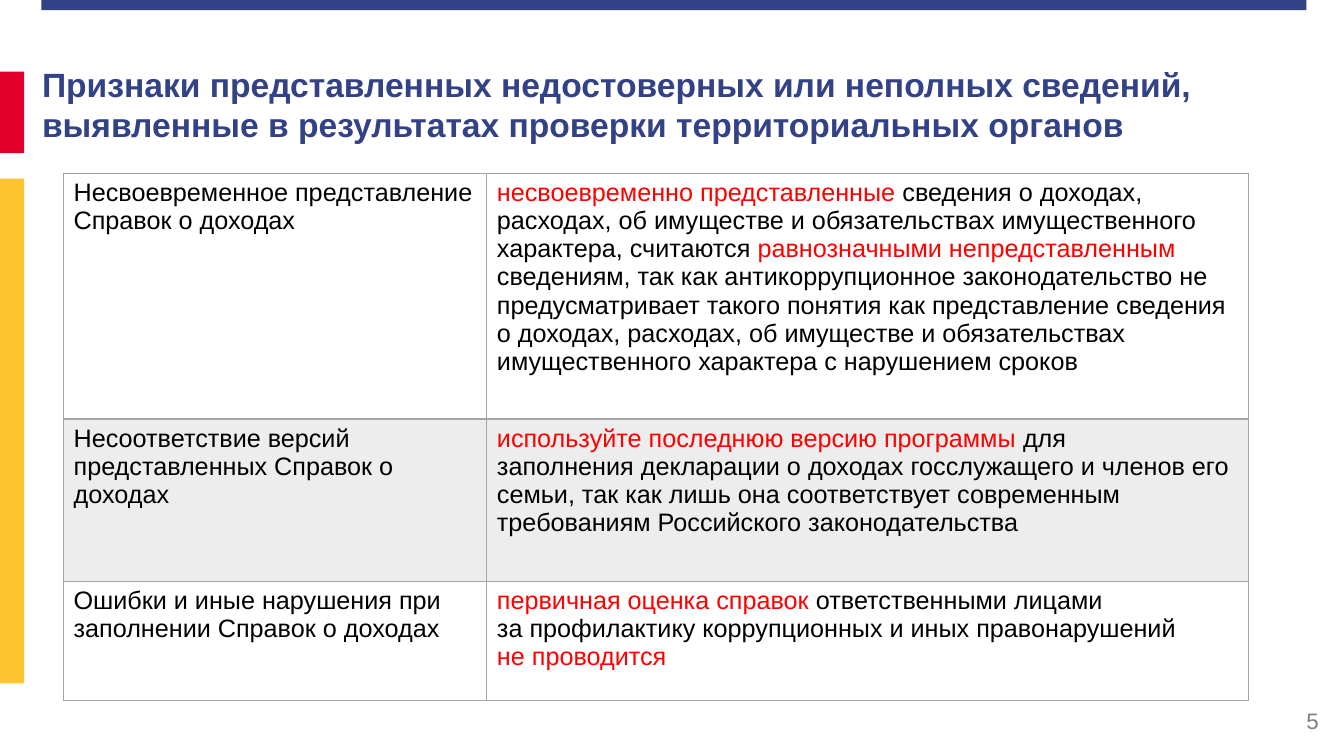
from typing import NamedTuple

from lxml.etree import SubElement
from pptx import Presentation
from pptx.dml.color import RGBColor
from pptx.enum.shapes import MSO_SHAPE
from pptx.enum.text import MSO_ANCHOR, PP_ALIGN
from pptx.oxml.ns import qn
from pptx.util import Pt

NAVY, RED, YELLOW = "334286", "E1002B", "FFC32E"
BLACK, ACCENT, GREY = "000000", "FF0000", "808080"
BORDER, BAND = "A5A5A5", "EDEDED"


class Box(NamedTuple):
    left: float
    top: float
    width: float
    height: float

    def lengths(self) -> list:
        return [Pt(v) for v in self]


class Bar(NamedTuple):
    box: Box
    color: str


class Span(NamedTuple):
    text: str
    color: str = BLACK


class Row(NamedTuple):
    height: float
    sign: str
    details: list[list[Span]]
    fill: str | None = None
    bottom: float = 1


BARS = [
    Bar(Box(29.5, 0, 903.6, 7.2), NAVY),
    Bar(Box(0, 51.1, 17.3, 58.3), RED),
    Bar(Box(0, 127.5, 17.3, 360.7), YELLOW),
]

ROWS = [
    Row(175.7, "Несвоевременное представление Справок о доходах", [
        [Span("несвоевременно представленные ", ACCENT), Span("сведения о доходах,")],
        [Span("расходах, об имуществе и обязательствах имущественного")],
        [Span("характера, считаются "), Span("равнозначными непредставленным", ACCENT)],
        [Span("сведениям, так как антикоррупционное законодательство не "
              "предусматривает такого понятия как представление сведения "
              "о доходах, расходах, об имуществе и обязательствах "
              "имущественного характера с нарушением сроков")],
    ], bottom=2),
    Row(115.6, "Несоответствие версий представленных Справок о доходах", [
        [Span("используйте последнюю версию программы ", ACCENT), Span("для")],
        [Span("заполнения декларации о доходах госслужащего и членов его "
              "семьи, так как лишь она соответствует современным "
              "требованиям Российского законодательства")],
    ], fill=BAND),
    Row(85.3, "Ошибки и иные нарушения при заполнении Справок о доходах", [
        [Span("первичная оценка справок ", ACCENT), Span("ответственными лицами")],
        [Span("за профилактику коррупционных и иных правонарушений")],
        [Span("не проводится", ACCENT)],
    ]),
]
COLUMNS = [302.4, 544.3]


def rgb(color: str) -> RGBColor:
    return RGBColor.from_string(color)


def add_run(p, text: str, *, size: float = 18, color: str = BLACK,
            bold: bool = False) -> None:
    r = p.add_run()
    r.text = text
    r.font.name = "Arial"
    r.font.size = Pt(size)
    r.font.bold = bold
    r.font.color.rgb = rgb(color)


def add_text(s, box: Box, text: str, *, align=PP_ALIGN.LEFT,
             anchor=MSO_ANCHOR.TOP, **font) -> None:
    tf = s.shapes.add_textbox(*box.lengths()).text_frame
    tf.word_wrap = True
    tf.vertical_anchor = anchor
    p = tf.paragraphs[0]
    p.alignment = align
    add_run(p, text, **font)


def add_bar(s, bar: Bar) -> None:
    sp = s.shapes.add_shape(MSO_SHAPE.RECTANGLE, *bar.box.lengths())
    sp.shadow.inherit = False
    sp.fill.solid()
    sp.fill.fore_color.rgb = rgb(bar.color)
    sp.line.fill.background()


def set_borders(cell, top: float, bottom: float) -> None:
    tc_pr = cell._tc.get_or_add_tcPr()
    for side, width in {"L": 1, "R": 1, "T": top, "B": bottom}.items():
        ln = SubElement(tc_pr, qn(f"a:ln{side}"), w=str(Pt(width)))
        fill = SubElement(ln, qn("a:solidFill"))
        SubElement(fill, qn("a:srgbClr"), val=BORDER)


def fill_cell(cell, paragraphs: list[list[Span]], fill: str | None) -> None:
    tf = cell.text_frame
    for i, spans in enumerate(paragraphs):
        p = tf.add_paragraph() if i else tf.paragraphs[0]
        for span in spans:
            add_run(p, span.text, color=span.color)
    if fill:
        cell.fill.solid()
        cell.fill.fore_color.rgb = rgb(fill)
    else:
        cell.fill.background()


def add_signs_table(s) -> None:
    box = Box(45.4, 123.8, sum(COLUMNS), sum(row.height for row in ROWS))
    table = s.shapes.add_table(len(ROWS), len(COLUMNS), *box.lengths()).table
    table.first_row = table.horz_banding = False
    for column, width in zip(table.columns, COLUMNS):
        column.width = Pt(width)
    top = 1
    for table_row, row in zip(table.rows, ROWS):
        table_row.height = Pt(row.height)
        for cell, content in zip(table_row.cells, ([[Span(row.sign)]], row.details)):
            set_borders(cell, top, row.bottom)
            fill_cell(cell, content, row.fill)
        top = row.bottom


def main() -> None:
    prs = Presentation()
    prs.slide_width, prs.slide_height = Pt(960), Pt(540)
    s = prs.slides.add_slide(prs.slide_layouts[6])
    for bar in BARS:
        add_bar(s, bar)
    add_text(s, Box(733, 500.4, 216, 28.8), "5", align=PP_ALIGN.RIGHT,
             anchor=MSO_ANCHOR.MIDDLE, size=16, color=GREY)
    add_text(s, Box(23, 42, 869, 90.7),
             "Признаки представленных недостоверных или неполных сведений, "
             "выявленные в результатах проверки территориальных органов",
             size=24, color=NAVY, bold=True)
    add_signs_table(s)
    prs.save("out.pptx")


if __name__ == "__main__":
    main()
